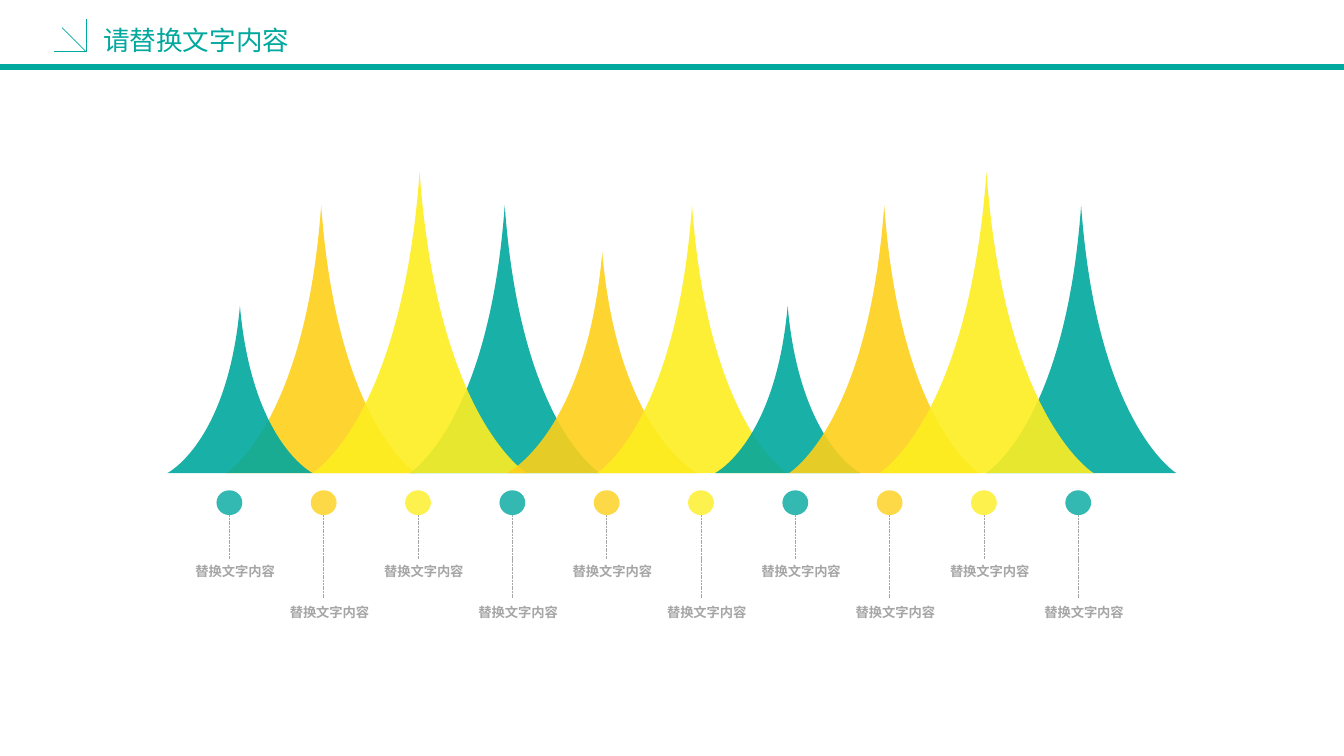
from dataclasses import dataclass
from itertools import cycle

from lxml.etree import SubElement
from pptx import Presentation
from pptx.dml.color import RGBColor
from pptx.enum.dml import MSO_LINE
from pptx.enum.shapes import MSO_CONNECTOR, MSO_SHAPE
from pptx.enum.text import MSO_ANCHOR, MSO_AUTO_SIZE, PP_ALIGN
from pptx.oxml.ns import qn
from pptx.shapes.autoshape import Shape
from pptx.slide import Slide
from pptx.text.text import TextFrame
from pptx.util import Inches, Pt

COLORS = {"teal": "01A89E", "amber": "FDD01A", "yellow": "FDEE21", "gray": "A6A6A6"}
PAGE_WIDTH, PAGE_HEIGHT = 14.06, 7.91
BASELINE = 4.95
DOT_COUNT = 10
FIRST_DOT, LAST_DOT = 2.4, 11.28
DOT_TOP, DOT_WIDTH, DOT_HEIGHT = 5.13, 0.27, 0.26
STEM_ENDS = (5.85, 6.26)
LABEL_TOPS = (5.86, 6.29)
LABEL_WIDTH, LABEL_HEIGHT, LABEL_SHIFT = 0.84, 0.2, 0.06


@dataclass
class Peak:
    """A curved spike standing on the baseline."""
    center: float
    width: float
    height: float
    color: str


@dataclass
class Rule:
    """A straight header line."""
    start: tuple[float, float]
    end: tuple[float, float]
    weight: float


PEAKS = [
    Peak(3.36, 1.99, 2.8, "amber"),
    Peak(5.28, 1.99, 2.8, "teal"),
    Peak(2.51, 1.52, 1.75, "teal"),
    Peak(4.39, 2.24, 3.15, "yellow"),
    Peak(6.3, 1.99, 2.31, "amber"),
    Peak(7.24, 1.99, 2.8, "yellow"),
    Peak(8.24, 1.52, 1.75, "teal"),
    Peak(9.25, 1.99, 2.8, "amber"),
    Peak(11.31, 1.99, 2.8, "teal"),
    Peak(10.32, 2.24, 3.15, "yellow"),
]
RULES = [
    Rule((0, 0.7), (PAGE_WIDTH, 0.7), 4.5),
    Rule((0.57, 0.54), (0.9, 0.54), 0.5),
    Rule((0.9, 0.54), (0.9, 0.2), 0.5),
    Rule((0.9, 0.54), (0.65, 0.29), 0.5),
]


def paint(shape: Shape, color: str, opacity: int) -> None:
    """Give a shape a translucent fill with no outline or shadow."""
    shape.shadow.inherit = False
    shape.line.fill.background()
    shape.fill.solid()
    shape.fill.fore_color.rgb = RGBColor.from_string(COLORS[color])
    tint = next(shape.fill._xPr.iter(qn("a:srgbClr")))
    SubElement(tint, qn("a:alpha"), val=str(opacity * 1000))


def add_peak(page: Slide, peak: Peak) -> None:
    """Draw a spike whose two sides are cubic curves."""
    left, right = peak.center - peak.width / 2, peak.center + peak.width / 2
    bend = peak.width / 12
    shoulder = BASELINE - 0.18 * peak.height
    points = [
        (right, BASELINE), (peak.center + bend, shoulder),
        (peak.center, BASELINE - peak.height),
        (peak.center - bend, shoulder), (left, BASELINE), (left, BASELINE),
    ]
    builder = page.shapes.build_freeform(Inches(right), Inches(BASELINE))
    builder.add_line_segments([(Inches(x), Inches(y)) for x, y in points])
    shape = builder.convert_to_shape()
    segments = list(shape._element.iter(qn("a:lnTo")))
    for side in (segments[:3], segments[3:]):
        curve = side[0].makeelement(qn("a:cubicBezTo"))
        side[0].addprevious(curve)
        for segment in side:
            curve.append(segment[0])
            segment.getparent().remove(segment)
    paint(shape, peak.color, 90)


def add_line(page: Slide, start: tuple[float, float], end: tuple[float, float], *,
             color: str, weight: float, dash: MSO_LINE | None = None) -> None:
    """Draw a straight line without a shadow."""
    line = page.shapes.add_connector(
        MSO_CONNECTOR.STRAIGHT, *(Inches(value) for value in (*start, *end)))
    line.line.color.rgb = RGBColor.from_string(COLORS[color])
    line.line.width = Pt(weight)
    if dash is not None:
        line.line.dash_style = dash
    SubElement(line._element.spPr, qn("a:effectLst"))


def write(frame: TextFrame, text: str, *, size: float, color: str,
          align: PP_ALIGN, bold: bool = False) -> None:
    """Fill a text frame with one formatted paragraph."""
    para = frame.paragraphs[0]
    para.alignment = align
    para.line_spacing = 1.2
    para.space_before = Pt(0)
    span = para.add_run()
    span.text = text
    span.font.name = "Arial"
    span.font.size = Pt(size)
    span.font.bold = bold
    span.font.color.rgb = RGBColor.from_string(COLORS[color])


def add_marker(page: Slide, center: float, color: str, level: int) -> None:
    """Draw a dot with its dashed stem and label."""
    dot = page.shapes.add_shape(
        MSO_SHAPE.OVAL, Inches(center - DOT_WIDTH / 2), Inches(DOT_TOP),
        Inches(DOT_WIDTH), Inches(DOT_HEIGHT))
    paint(dot, color, 80)
    add_line(page, (center, DOT_TOP + DOT_HEIGHT), (center, STEM_ENDS[level]),
             color="gray", weight=0.5, dash=MSO_LINE.SQUARE_DOT)
    box = page.shapes.add_textbox(
        Inches(center + LABEL_SHIFT - LABEL_WIDTH / 2), Inches(LABEL_TOPS[level]),
        Inches(LABEL_WIDTH), Inches(LABEL_HEIGHT))
    frame = box.text_frame
    frame.margin_left = frame.margin_right = frame.margin_top = frame.margin_bottom = 0
    frame.word_wrap = False
    frame.auto_size = MSO_AUTO_SIZE.SHAPE_TO_FIT_TEXT
    write(frame, "替换文字内容", size=10, color="gray", align=PP_ALIGN.CENTER, bold=True)


def add_title(page: Slide, text: str) -> None:
    """Place the slide title beside the corner mark."""
    title = page.shapes.title
    title.left, title.top = Inches(0.97), Inches(0.15)
    title.width, title.height = Inches(2.36), Inches(0.47)
    frame = title.text_frame
    frame.word_wrap = True
    frame.auto_size = MSO_AUTO_SIZE.NONE
    frame.vertical_anchor = MSO_ANCHOR.MIDDLE
    frame.margin_left = frame.margin_right = Inches(0.11)
    frame.margin_top = frame.margin_bottom = Inches(0.05)
    write(frame, text, size=20, color="teal", align=PP_ALIGN.LEFT)


def main() -> None:
    """Build and save the slide."""
    deck = Presentation()
    deck.slide_width, deck.slide_height = Inches(PAGE_WIDTH), Inches(PAGE_HEIGHT)
    page = deck.slides.add_slide(deck.slide_layouts.get_by_name("Title Only"))
    add_title(page, "请替换文字内容")
    for rule in RULES:
        add_line(page, rule.start, rule.end, color="teal", weight=rule.weight)
    for peak in PEAKS:
        add_peak(page, peak)
    pitch = (LAST_DOT - FIRST_DOT) / (DOT_COUNT - 1)
    for index, color in zip(range(DOT_COUNT), cycle(("teal", "amber", "yellow"))):
        add_marker(page, FIRST_DOT + index * pitch, color, index % 2)
    deck.save("out.pptx")


if __name__ == "__main__":
    main()
